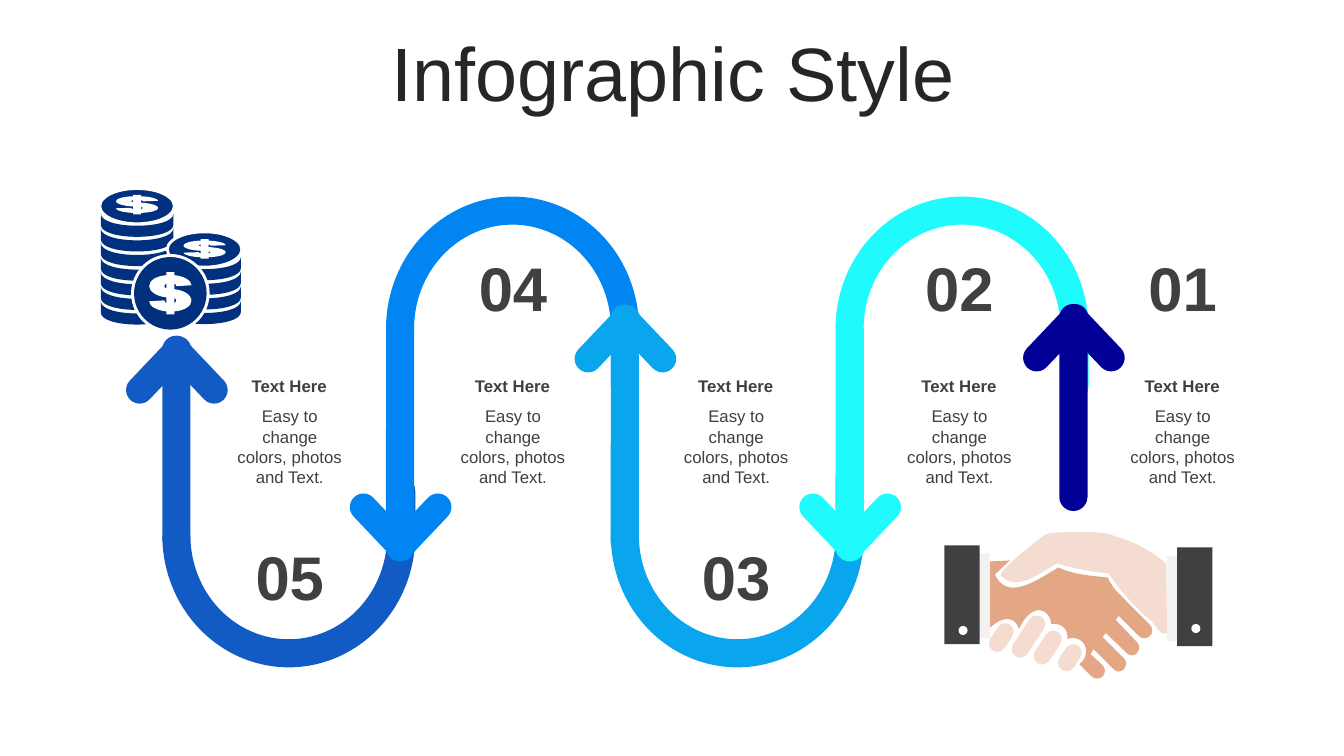
from lxml import etree
from pptx import Presentation, util as u
from pptx.dml.color import RGBColor
from pptx.enum import shapes, text

# Colours
WHITE = RGBColor(0xFF, 0xFF, 0xFF)
INK = RGBColor(0x26, 0x26, 0x26)
GREY = RGBColor(0x40, 0x40, 0x40)
PALE = RGBColor(0xF2, 0xF2, 0xF2)
NAVY = RGBColor(0x00, 0x30, 0x7E)
ROYAL = RGBColor(0x12, 0x5A, 0xC4)
AZURE = RGBColor(0x00, 0x85, 0xF2)
SKY = RGBColor(0x0A, 0xA6, 0xED)
CYAN = RGBColor(0x1F, 0xFB, 0xFD)
DEEP = RGBColor(0x00, 0x00, 0x96)
LIGHT = RGBColor(0xF4, 0xDD, 0xD0)
TAN = RGBColor(0xE4, 0xA7, 0x86)

# Content (all numbers are in inches)
TITLE = "Infographic Style"
HEAD = "Text Here"
BODY = "Easy to change colors, photos and Text."
STEPS = [("05", 5.3), ("04", 2.43), ("03", 5.3), ("02", 2.43), ("01", 2.43)]

# Arrows: colour, left, points up, shaft top and height, arm top, stub top and height
ARROWS = [
    (ROYAL, 1.61, True, 3.33, 2.14, 3.26, (4.73, 0.71)),
    (AZURE, 3.83, False, 3.13, 2.44, 4.82, (3.13, 0.84)),
    (SKY, 6.06, True, 3.02, 2.5, 2.95, (4.6, 0.84)),
    (CYAN, 8.29, False, 3.13, 2.44, 4.82, (3.13, 0.84)),
    (DEEP, 10.51, True, 3.13, 1.94, 2.94, None),
]

# Coin stacks: centre, top ellipse, first band, bands
STACKS = [(1.36, 1.88, 2.12, 7), (2.03, 2.31, 2.55, 4)]
BAND = [(-.36, 0), (-.36, .16, .36, .16, .36, 0), (.36, .11),
        (.36, .27, -.36, .27, -.36, .11)]
DISC = (1.69, 2.91)
# Half of the dollar sign and one of its holes; two numbers a line, six a curve
HALF = [(-.04, -.21), (-.04, -.18), (-.14, -.17, -.21, -.13, -.21, -.07),
        (-.21, -.02, -.14, .03, -.04, .04), (-.04, .10),
        (-.05, .09, -.06, .08, -.06, .07), (-.21, .08),
        (-.21, .13, -.13, .17, -.04, .18), (-.04, .21)]
HOLE = [(-.04, -.10), (-.04, -.05), (-.05, -.05, -.06, -.06, -.06, -.07),
        (-.06, -.08, -.05, -.09, -.04, -.10)]
# Dollar signs: centre and flattening
SIGNS = [(*DISC, 1), (1.36, 2.03, 0.46), (2.03, 2.47, 0.46)]

# Handshake
BACK = [(10.49, 5.59), (10.34, 5.66, 10.09, 5.89, 9.93, 5.71),
        (9.9, 5.67, 10.32, 5.33, 10.38, 5.3), (10.44, 5.27, 10.94, 5.27, 11, 5.3),
        (11.25, 5.37, 11.4, 5.45, 11.57, 5.59), (11.58, 6.28),
        (11.52, 6.3, 11.51, 6.27, 11.44, 6.18), (11.25, 6.01, 11.11, 5.86, 11, 5.69),
        (10.82, 5.67, 10.65, 5.64, 10.49, 5.59)]
FRONT = [(10.02, 5.56), (9.87, 5.7), (9.99, 5.95, 10.24, 5.79, 10.5, 5.63),
         (10.65, 5.7, 10.81, 5.71, 10.99, 5.73), (11.05, 5.86, 11.12, 5.9, 11.19, 5.98),
         (11.41, 6.2), (11.44, 6.23, 11.44, 6.28, 11.41, 6.31),
         (11.38, 6.34, 11.33, 6.34, 11.3, 6.31), (11.1, 6.11), (11.07, 6.15),
         (11.28, 6.37), (11.31, 6.4, 11.31, 6.45, 11.28, 6.48),
         (11.25, 6.51, 11.21, 6.51, 11.18, 6.48), (10.97, 6.28), (10.94, 6.32),
         (11.15, 6.53), (11.18, 6.56, 11.18, 6.61, 11.15, 6.64),
         (11.12, 6.67, 11.08, 6.67, 11.05, 6.64), (10.85, 6.44), (10.82, 6.49),
         (10.94, 6.6), (10.97, 6.63, 10.97, 6.68, 10.94, 6.71),
         (10.91, 6.74, 10.86, 6.74, 10.83, 6.71), (10.71, 6.59),
         (10.75, 6.55), (10.84, 6.37, 10.67, 6.3, 10.59, 6.34),
         (10.6, 6.22, 10.51, 6.18, 10.43, 6.19), (10.42, 6.04, 10.24, 5.96, 10.11, 6.24),
         (10.07, 6.12, 9.96, 6.1, 9.82, 6.23), (9.82, 5.57)]
FINGERS = [(9.85, 6.17, 0.31), (10.12, 6.08, 0.47), (10.31, 6.24, 0.37), (10.53, 6.38, 0.29)]
CUFFS = [(11.58, 5.52, 0.11, 0.84, PALE), (9.71, 5.49, 0.11, 0.84, PALE),
         (11.68, 5.43, 0.35, 0.98, GREY), (9.37, 5.41, 0.35, 0.98, GREY)]
STUDS = [(11.82, 6.19), (9.51, 6.21)]

KIND = shapes.MSO_SHAPE
NS = "{http://schemas.openxmlformats.org/drawingml/2006/main}"
deck = Presentation()
deck.slide_width, deck.slide_height = u.Cm(33.87), u.Cm(19.05)
slide = deck.slides.add_slide(deck.slide_layouts[6])


def cm(inch):
    return u.Cm(inch * 2.54)


def paint(part, color):
    part.shadow.inherit = False
    part.fill.solid()
    part.fill.fore_color.rgb = color
    part.line.fill.background()
    return part


def shape(kind, x, y, w, h, color, turn=0):
    part = paint(slide.shapes.add_shape(kind, cm(x), cm(y), cm(w), cm(h)), color)
    part.rotation = turn
    return part


def pill(*spec):
    shape(KIND.ROUNDED_RECTANGLE, *spec).adjustments[0] = 0.5


def place(ring, x, y, sx=1, sy=1):
    """Scale a ring and move it to x, y."""
    return [tuple(v * (sy if i % 2 else sx) + (y if i % 2 else x)
                  for i, v in enumerate(step)) for step in ring]


def outline(rings, color):
    """Draw rings of lines and curves as one freeform."""
    pen = slide.shapes.build_freeform(*map(cm, rings[0][0]))
    for i, ring in enumerate(rings):
        if i:
            pen.move_to(*map(cm, ring[0]))
        dots = [(cm(s[k]), cm(s[k + 1])) for s in ring[1:] for k in range(0, len(s), 2)]
        pen.add_line_segments(dots, close=True)
    part = paint(pen.convert_to_shape(), color)
    # Join each three points of a curve
    legs = iter(list(part._element.iter(NS + "lnTo")))
    for step in (s for ring in rings for s in ring[1:]):
        leg = next(legs)
        if len(step) == 6:
            curve = etree.Element(NS + "cubicBezTo")
            leg.addprevious(curve)
            for bit in (leg, next(legs), next(legs)):
                curve.append(bit[0])
                bit.getparent().remove(bit)


def label(words, x, y, w, h, size, color=GREY, bold=False):
    box = slide.shapes.add_textbox(cm(x), cm(y), cm(w), cm(h))
    box.text_frame.word_wrap = True
    para = box.text_frame.paragraphs[0]
    para.alignment = text.PP_ALIGN.CENTER
    run = para.add_run()
    run.text = words
    for name, value in dict(name="Arial", size=u.Pt(size), bold=bold).items():
        setattr(run.font, name, value)
    run.font.color.rgb = color
    return box.text_frame, run


# Title
frame, _ = label(TITLE, 0.35, 0.37, 12.66, 0.79, 54, INK)
frame.vertical_anchor = text.MSO_ANCHOR.MIDDLE
frame.paragraphs[0].line_spacing = 0.9
frame.paragraphs[0].space_before = u.Pt(10)

# Coins
for mid, top, first, count in STACKS:
    lid = shape(KIND.OVAL, mid - 0.37, top - 0.01, 0.74, 0.35, NAVY)
    lid.line.color.rgb, lid.line.width = WHITE, u.Pt(2)
    outline([place(BAND, mid, first + 0.145 * i) for i in range(count)], NAVY)
for r, color in ((0.39, WHITE), (0.36, NAVY)):
    shape(KIND.OVAL, DISC[0] - r, DISC[1] - r, 2 * r, 2 * r, color)
sign = [HALF + place(HALF, 0, 0, -1, -1), HOLE, place(HOLE, 0, 0, -1, -1)]
outline([place(ring, x, y, 1, flat) for x, y, flat in SIGNS for ring in sign], WHITE)

# Step texts
for i, (num, y) in enumerate(STEPS):
    x = 2.25 + 2.215 * i
    _, run = label(num, x + 0.1, y, 1.05, 0.84, 44, bold=True)
    edge = etree.Element(NS + "ln", w="12700")
    fill = etree.SubElement(edge, NS + "solidFill")
    etree.SubElement(fill, NS + "srgbClr", val=str(WHITE))
    run._r.get_or_add_rPr().insert(0, edge)
    label(BODY, x, 3.98, 1.25, 0.91, 12)
    label(HEAD, x, 3.68, 1.24, 0.3, 12, bold=True)

# Arrows
for color, x, up, top, tall, arm, stub in ARROWS:
    tilt = 43.5 if up else -43.5
    if stub:
        pill(x + 2.23, stub[0], 0.28, stub[1], color)
    pill(x - 0.17, arm, 0.27, 0.82, color, tilt)
    pill(x + 0.19, arm, 0.27, 0.82, color, -tilt)
    pill(x, top, 0.28, tall, color)
    if stub:
        bend = shape(KIND.BLOCK_ARC, x, 4 if up else 1.95, 2.51, 2.62, color, 180 if up else 0)
        bend.adjustments[2] = 0.111

# Handshake
outline([place(BACK, 0, 0)], LIGHT)
for x, y, h in FINGERS:
    pill(x, y, 0.17, h, LIGHT, 33.4)
outline([FRONT], TAN)
for cuff in CUFFS:
    shape(KIND.RECTANGLE, *cuff)
for x, y in STUDS:
    shape(KIND.OVAL, x, y, 0.09, 0.09, WHITE)

deck.save("out.pptx")
